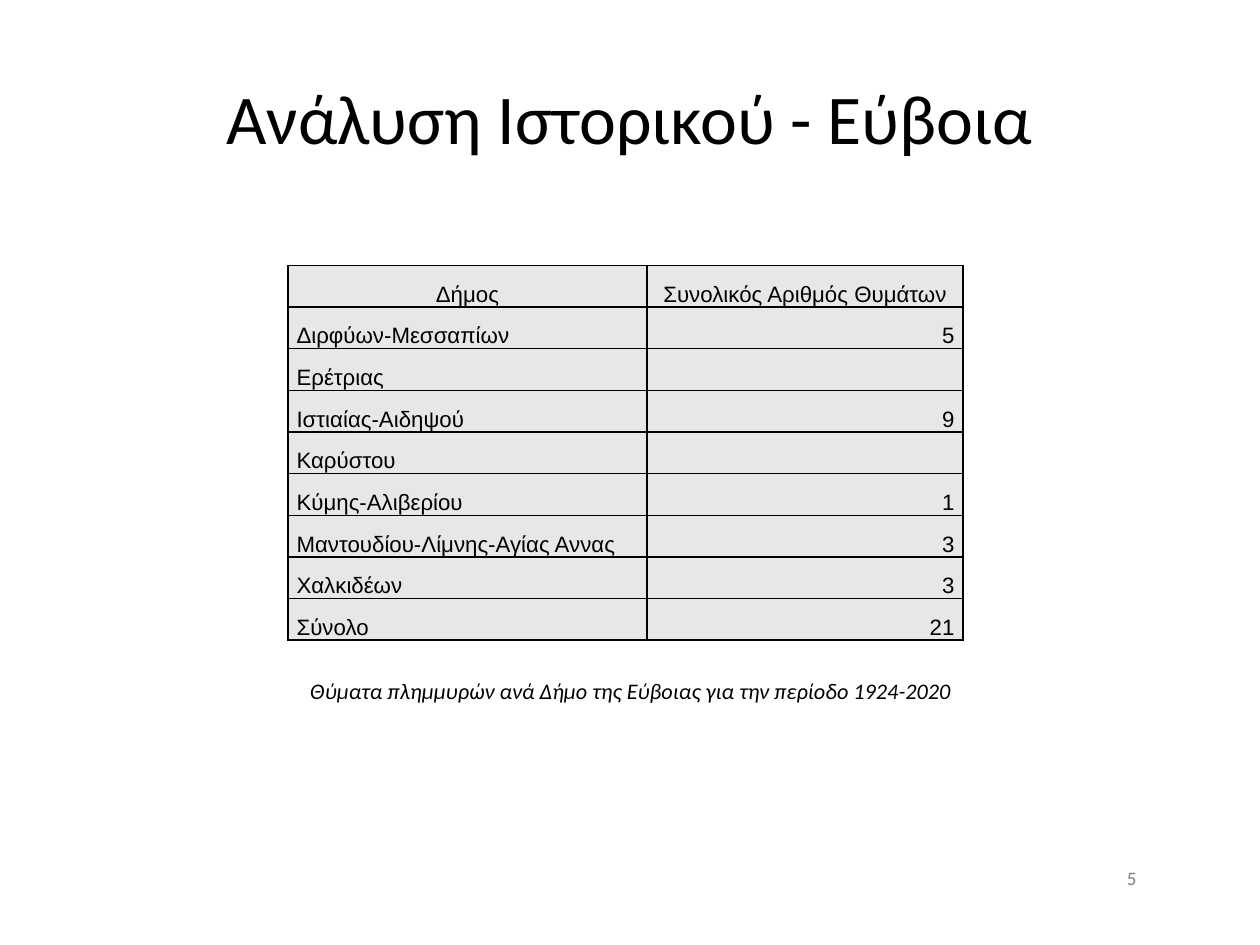
from lxml import etree
from pptx import Presentation
from pptx.dml.color import RGBColor
from pptx.enum.text import MSO_ANCHOR, PP_ALIGN
from pptx.oxml.ns import qn
from pptx.util import Cm, Pt

LEFT, MID, RIGHT = PP_ALIGN.LEFT, PP_ALIGN.CENTER, PP_ALIGN.RIGHT
TOP, CENTRE, BASE = MSO_ANCHOR.TOP, MSO_ANCHOR.MIDDLE, MSO_ANCHOR.BOTTOM

COLORS = {"ink": "000000", "cell": "E7E7E7", "page": "808080"}
HEAD = ("Δήμος", "Συνολικός Αριθμός Θυμάτων")
TOWNS = [
    ("Διρφύων-Μεσσαπίων", "5"),
    ("Ερέτριας", ""),
    ("Ιστιαίας-Αιδηψού", "9"),
    ("Καρύστου", ""),
    ("Κύμης-Αλιβερίου", "1"),
    ("Μαντουδίου-Λίμνης-Αγίας Αννας", "3"),
    ("Χαλκιδέων", "3"),
    ("Σύνολο", "21"),
]


def rgb(name):
    return RGBColor.from_string(COLORS[name])


def write(frame, text, size, face="Calibri", color="ink", align=MID):
    """Fill a text frame with one styled paragraph."""
    frame.text = text
    para = frame.paragraphs[0]
    para.alignment = align
    for run in para.runs:
        run.font.size = Pt(size)
        run.font.name = face
        run.font.color.rgb = rgb(color)
    return para


def add_title(slide, box, text):
    title = slide.shapes.title
    title.left, title.top, title.width, title.height = map(Cm, box)
    title.text_frame.vertical_anchor = CENTRE
    write(title.text_frame, text, 44)


def add_borders(cell):
    props = cell._tc.get_or_add_tcPr()
    for side in ("lnL", "lnR", "lnT", "lnB"):
        line = etree.SubElement(props, qn("a:" + side), w=str(Pt(1)))
        fill = etree.SubElement(line, qn("a:solidFill"))
        etree.SubElement(fill, qn("a:srgbClr"), val=COLORS["ink"])


def style_cell(cell, text, align):
    add_borders(cell)
    cell.fill.solid()
    cell.fill.fore_color.rgb = rgb("cell")
    cell.vertical_anchor = BASE
    cell.margin_left = cell.margin_right = Cm(0.19)
    cell.margin_top = cell.margin_bottom = 0
    para = write(cell.text_frame, text, 14, "Arial", align=align)
    para.line_spacing = 1.15


def add_grid(slide, box, share):
    """Place the table of victims; share is the first column's part."""
    rows = [HEAD] + TOWNS
    wide = box[2]
    table = slide.shapes.add_table(len(rows), len(HEAD), *map(Cm, box)).table
    table.columns[0].width = Cm(wide * share)
    table.columns[1].width = Cm(wide * (1 - share))
    for r, row in enumerate(rows):
        table.rows[r].height = Cm(box[3] / len(rows))
        aligns = (LEFT, RIGHT) if r else (MID, MID)
        for c, text in enumerate(row):
            style_cell(table.cell(r, c), text, aligns[c])


def add_label(slide, box, text, size, color="ink", align=MID, anchor=TOP):
    frame = slide.shapes.add_textbox(*map(Cm, box)).text_frame
    frame.word_wrap = True
    frame.vertical_anchor = anchor
    return write(frame, text, size, color=color, align=align)


def main():
    deck = Presentation()
    deck.slide_width, deck.slide_height = Cm(28), Cm(21)
    slide = deck.slides.add_slide(deck.slide_layouts[5])

    # Title
    add_title(slide, (1.4, 0.84, 25.2, 3.5), "Ανάλυση Ιστορικού - Εύβοια")

    # Table and its caption
    add_grid(slide, (6.4, 5.9, 15, 8.33), 0.532)
    note = add_label(
        slide, (6.6, 14.91, 14.84, 0.86),
        "Θύματα πλημμυρών ανά Δήμο της Εύβοιας για την περίοδο 1924-2020",
        14, anchor=CENTRE)
    note.runs[0].font.italic = True

    # Page number
    add_label(slide, (24.79, 19.13, 1.8, 1.45), "5", 12, "page", LEFT)

    deck.save("out.pptx")


if __name__ == "__main__":
    main()
